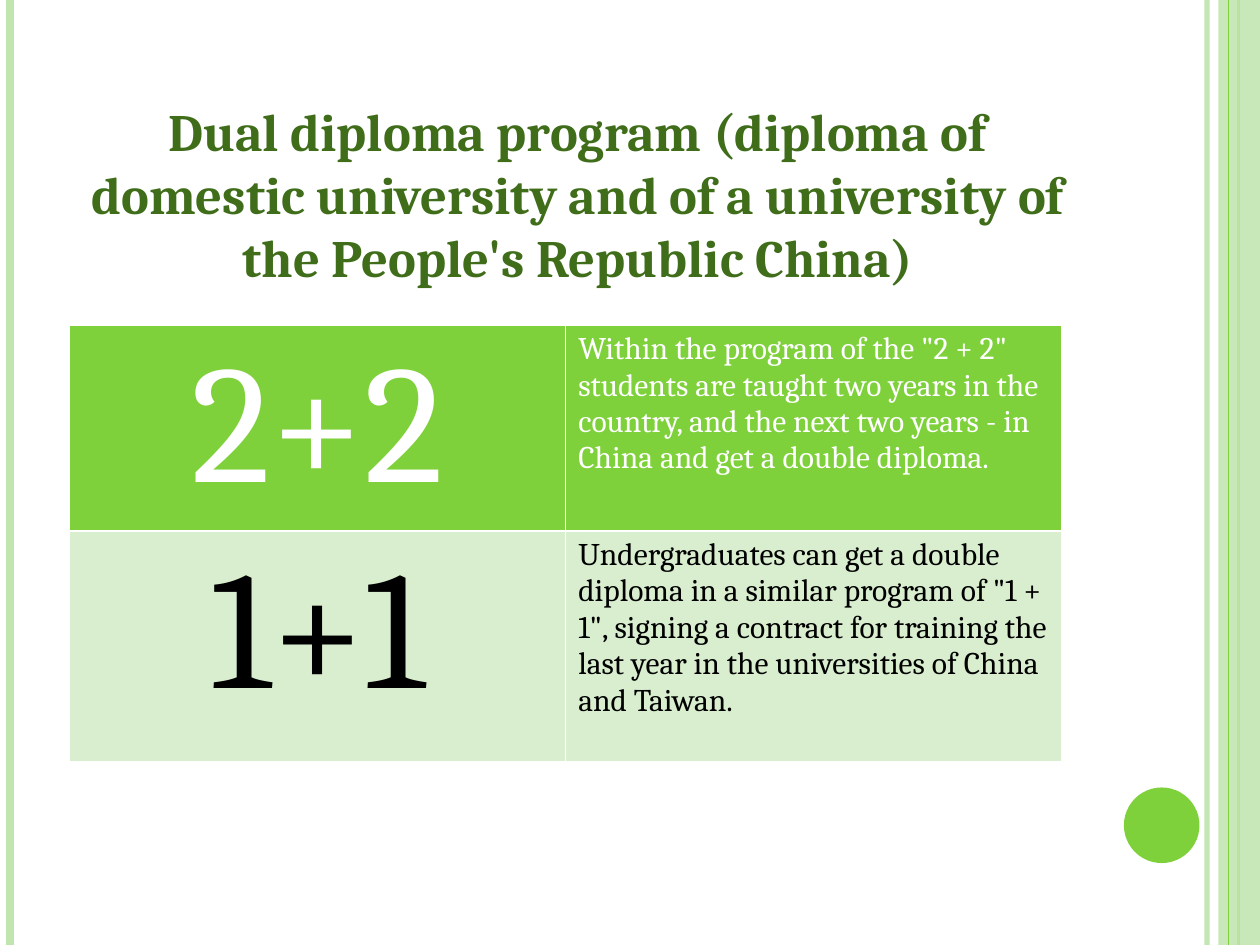
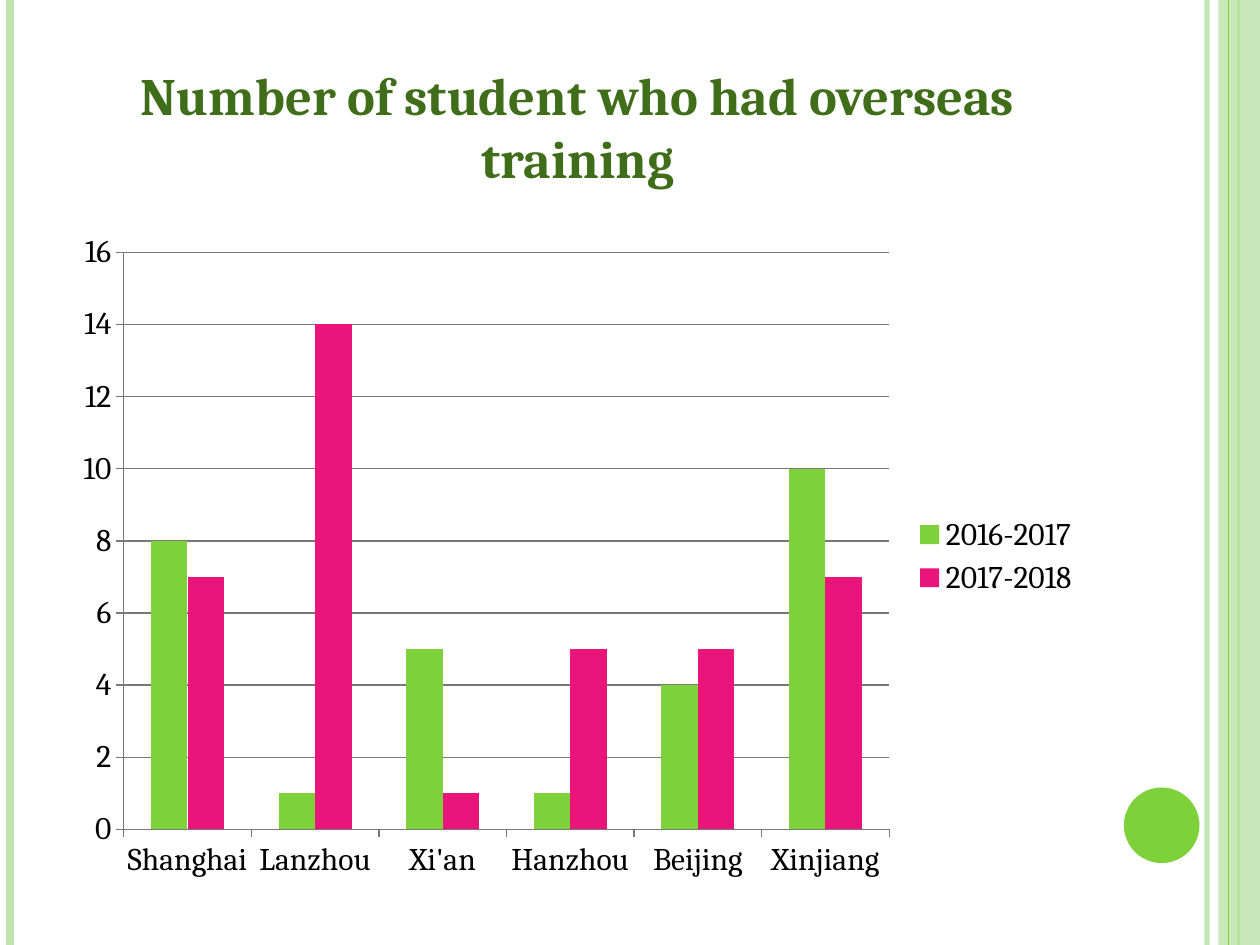
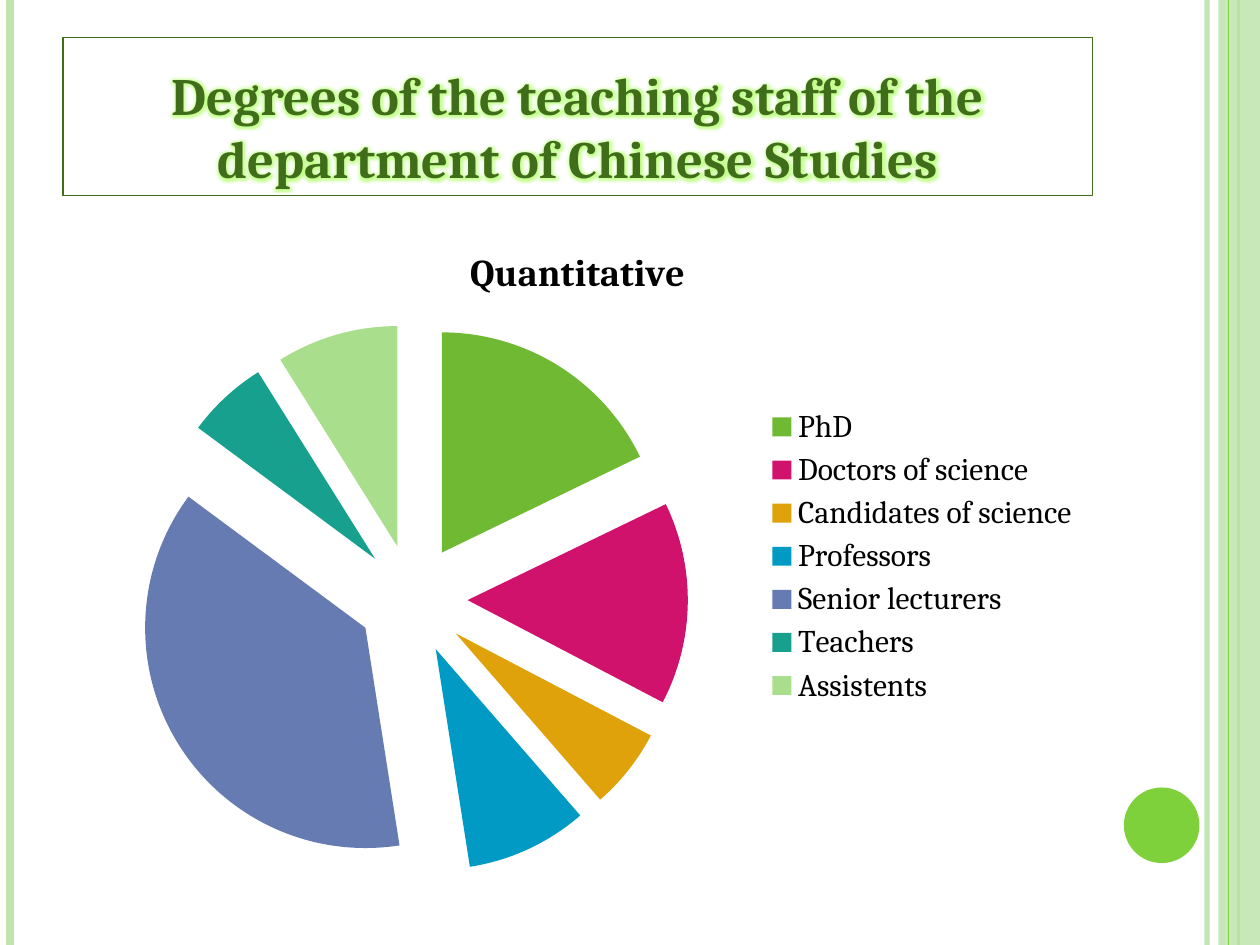
import pptx
import pptx.chart.data
import pptx.dml.color
import pptx.enum.chart
import pptx.enum.shapes
import pptx.enum.text
import pptx.oxml
import pptx.oxml.ns
import pptx.util

Inches = pptx.util.Inches
Pt = pptx.util.Pt
qn = pptx.oxml.ns.qn
NS = pptx.oxml.ns.nsdecls("a", "c")

FONT = "Cambria"
GREEN = "7FD13B"
PALE_GREEN = "C0E5AF"
DARK_GREEN = "3F6D19"
LIGHT_ROW = "D8EECE"
PINK = "EA157A"
GRID_GREY = "787878"
WHITE = "FFFFFF"
BLACK = "000000"
DEGREE_COLOURS = ["70BA33", "D0126C", "E0A20A", "009AC4", "667BB1", "17A08D", "A8DE8C"]
CONTENT_AREA = (0.5, 1.75, 8.17, 5.33)


def rgb(code):
    return pptx.dml.color.RGBColor.from_string(code)


def apply(target, values):
    for name, value in values.items():
        setattr(target, name, value)


def xml(text):
    tag, rest = text.split(" ", 1) if " " in text.split(">")[0] else (text.split(">")[0], None)
    if rest is None:
        return pptx.oxml.parse_xml(text.replace(tag, f"{tag} {NS}", 1))
    return pptx.oxml.parse_xml(f"{tag} {NS} {rest}")


def set_font(font, size, colour, bold=False):
    apply(font, {"name": FONT, "size": Pt(size), "bold": bold})
    font.color.rgb = rgb(colour)


def set_line(line, colour, width):
    line.color.rgb = rgb(colour)
    line.width = Pt(width)


def set_opacity(shape, percent):
    for colour in shape.element.spPr.iter(qn("a:srgbClr")):
        colour.append(xml(f'<a:alpha val="{percent * 1000}"/>'))


class Deck:
    def __init__(self):
        self.show = pptx.Presentation()
        apply(self.show, {"slide_width": Inches(10), "slide_height": Inches(7.5)})
        self.layout = self.show.slide_layouts.get_by_name("Title Only")
        self.slide = None
        self.decorated = False

    def new_slide(self, heading, height, framed=False):
        self.slide = self.show.slides.add_slide(self.layout)
        if not self.decorated:
            self.decorate_layout()
        self.title(heading, height, framed)

    def decorate_layout(self):
        parts = [
            self.vertical_line(9.58, PALE_GREEN, 3, 93),
            self.vertical_line(0.08, PALE_GREEN, 4.5),
            self.vertical_line(9.83, GREEN, 1.5),
            self.solid("RECTANGLE", (9.67, 0, 0.33, 7.5), PALE_GREEN, 87),
            self.vertical_line(9.75, GREEN, 0.75),
            self.solid("OVAL", (8.92, 6.25, 0.6, 0.6), GREEN),
        ]
        for number, part in enumerate(parts, 20):
            part.element.xpath(".//p:cNvPr")[0].set("id", str(number))
            self.layout.shapes.element.append(part.element)
        self.decorated = True

    def vertical_line(self, x, colour, width, opacity=100):
        rule = self.slide.shapes.add_connector(
            pptx.enum.shapes.MSO_CONNECTOR.STRAIGHT, Inches(x), 0, Inches(x), Inches(7.5))
        set_line(rule.line, colour, width)
        if opacity < 100:
            set_opacity(rule, opacity)
        rule.element.spPr.append(xml("<a:effectLst/>".replace("/>", "></a:effectLst>")))
        return rule

    def solid(self, kind, box, colour, opacity=100):
        shape = self.slide.shapes.add_shape(
            getattr(pptx.enum.shapes.MSO_SHAPE, kind), *map(Inches, box))
        shape.shadow.inherit = False
        shape.fill.solid()
        shape.fill.fore_color.rgb = rgb(colour)
        shape.line.fill.background()
        if opacity < 100:
            set_opacity(shape, opacity)
        return shape

    def title(self, text, height, framed):
        heading = self.slide.shapes.title
        apply(heading, {"left": Inches(0.5), "top": Inches(0.3),
                        "width": Inches(8.17), "height": Inches(height)})
        apply(heading.text_frame, {"text": text, "word_wrap": True,
                                   "auto_size": pptx.enum.text.MSO_AUTO_SIZE.NONE,
                                   "vertical_anchor": pptx.enum.text.MSO_ANCHOR.BOTTOM})
        paragraph = heading.text_frame.paragraphs[0]
        paragraph.alignment = pptx.enum.text.PP_ALIGN.CENTER
        font = paragraph.runs[0].font
        set_font(font, 30, DARK_GREEN, True)
        if framed:
            set_line(heading.line, DARK_GREEN, 0.75)
            glow = xml('<a:effectLst ><a:glow rad="63500"><a:srgbClr val="9CFF40">'
                       '<a:alpha val="60000"/></a:srgbClr></a:glow></a:effectLst>')
            paragraph.runs[0]._r.rPr.find(qn("a:solidFill")).addnext(glow)

    def table(self, left, top, column_width, programs):
        heights = [row["height"] for row in programs]
        grid = self.slide.shapes.add_table(
            len(programs), 2, Inches(left), Inches(top),
            Inches(2 * column_width), Inches(sum(heights))).table
        for index, program in enumerate(programs):
            grid.rows[index].height = Inches(program["height"])
            self.cell(grid.cell(index, 0), program["name"], 96, program,
                      pptx.enum.text.PP_ALIGN.CENTER)
            self.cell(grid.cell(index, 1), program["details"], 18, program,
                      pptx.enum.text.PP_ALIGN.LEFT)

    def cell(self, cell, text, size, program, alignment):
        cell.text = text
        paragraph = cell.text_frame.paragraphs[0]
        paragraph.alignment = alignment
        set_font(paragraph.runs[0].font, size, program["ink"])
        properties = cell._tc.get_or_add_tcPr()
        for side in "LRTB":
            properties.append(xml(f'<a:ln{side} w="12700"><a:solidFill><a:srgbClr val="{WHITE}"/>'
                                  f'</a:solidFill></a:ln{side}>'))
        cell.fill.solid()
        cell.fill.fore_color.rgb = rgb(program["fill"])

    def chart(self, kind, categories, series):
        data = pptx.chart.data.CategoryChartData()
        data.categories = categories
        for name, values in series.items():
            data.add_series(name, values)
        chart = self.slide.shapes.add_chart(
            getattr(pptx.enum.chart.XL_CHART_TYPE, kind), *map(Inches, CONTENT_AREA), data).chart
        set_font(chart.font, 18, BLACK)
        chart.has_legend = True
        apply(chart.legend, {"position": pptx.enum.chart.XL_LEGEND_POSITION.RIGHT,
                             "include_in_layout": False})
        return chart

    def columns(self, categories, series, colours):
        chart = self.chart("COLUMN_CLUSTERED", categories, series)
        chart.has_title = False
        plot = chart.plots[0]
        apply(plot, {"gap_width": 150, "overlap": 0, "vary_by_categories": False})
        for year, colour in zip(plot.series, colours):
            year.format.fill.solid()
            year.format.fill.fore_color.rgb = rgb(colour)
        for axis in (chart.category_axis, chart.value_axis):
            axis.major_tick_mark = pptx.enum.chart.XL_TICK_MARK.OUTSIDE
            set_line(axis.format.line, GRID_GREY, 0.75)
        apply(chart.value_axis, {"minimum_scale": 0, "maximum_scale": 16, "major_unit": 2})
        set_line(chart.value_axis.major_gridlines.format.line, GRID_GREY, 0.75)

    def exploded_pie(self, name, shares, colours):
        chart = self.chart("PIE", list(shares), {name: list(shares.values())})
        chart.has_title = True
        chart.chart_title.include_in_layout = False
        chart.chart_title.text_frame.text = name
        set_font(chart.chart_title.text_frame.paragraphs[0].runs[0].font, 21.6, BLACK, True)
        plot = chart.plots[0]
        plot.vary_by_categories = True
        degrees = plot.series[0]
        for index, colour in enumerate(colours):
            fill = degrees.points[index].format.fill
            fill.solid()
            fill.fore_color.rgb = rgb(colour)
        first_slice = degrees._element.find(qn("c:dPt"))
        first_slice.addprevious(xml('<c:explosion val="25"/>'))


def main():
    deck = Deck()

    deck.new_slide("Dual diploma program (diploma of domestic university and of a university "
                   "of the People's Republic China)", 2.04)
    deck.table(0.55, 2.58, 3.94, [
        {"name": "2+2", "height": 1.63, "fill": GREEN, "ink": WHITE,
         "details": 'Within the program of the "2 + 2" students are taught two years in the '
                    "country, and the next two years - in China and get a double diploma."},
        {"name": "1+1", "height": 1.83, "fill": LIGHT_ROW, "ink": BLACK,
         "details": 'Undergraduates can get a double diploma in a similar program of "1 + 1", '
                    "signing a contract for training the last year in the universities of "
                    "China and Taiwan."},
    ])

    deck.new_slide("Number of student who had overseas training", 1.25)
    deck.columns(["Shanghai", "Lanzhou", "Xi'an", "Hanzhou", "Beijing", "Xinjiang"],
                 {"2016-2017": [8, 1, 5, 1, 4, 10], "2017-2018": [7, 14, 1, 5, 5, 7]},
                 [GREEN, PINK])

    deck.new_slide("Degrees of the teaching staff of the department of Chinese Studies",
                   1.25, framed=True)
    deck.exploded_pie("Quantitative", {
        "PhD": 18, "Doctors of science": 15, "Candidates of science": 6, "Professors": 9,
        "Senior lecturers": 38, "Teachers": 6, "Assistents": 9}, DEGREE_COLOURS)

    deck.show.save("out.pptx")


if __name__ == "__main__":
    main()
